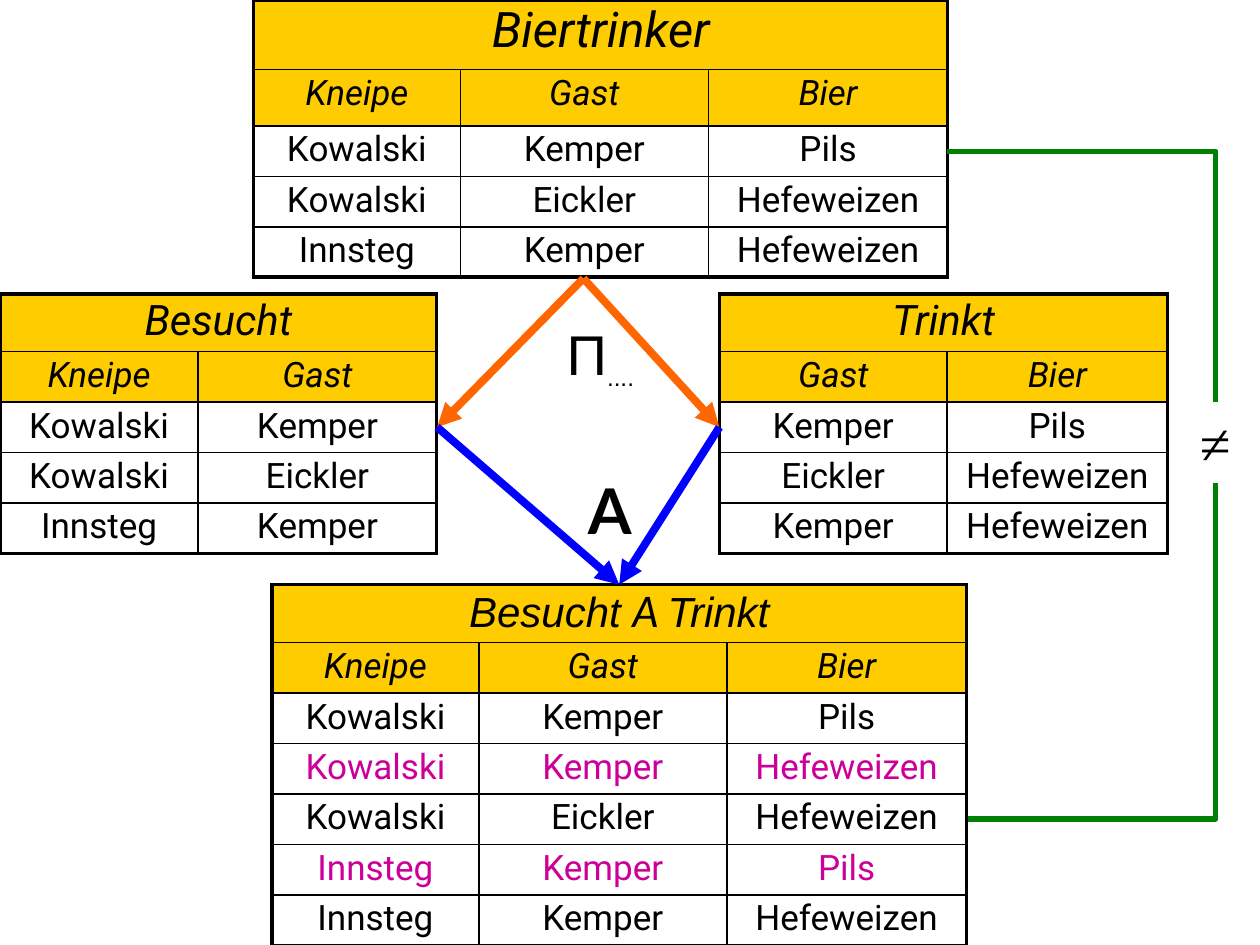
from lxml.etree import SubElement
from pptx import Presentation
from pptx.dml.color import RGBColor
from pptx.enum.shapes import MSO_CONNECTOR
from pptx.enum.text import MSO_AUTO_SIZE, PP_ALIGN
from pptx.oxml.ns import qn
from pptx.util import Pt

BLACK, GOLD, PINK = "000000", "FFCC00", "CC0099"
ORANGE, BLUE, GREEN = "FF6600", "0000FF", "008000"
ROW = 28.8


def color(value):
    return RGBColor.from_string(value)


def format_run(r, size, font="Roboto", c=BLACK, italic=False, bold=False):
    r.font.size, r.font.name = Pt(size), font
    r.font.italic, r.font.bold = italic, bold
    r.font.color.rgb = color(c)


def format_cell_paragraph(p):
    p.alignment, p.line_spacing = PP_ALIGN.CENTER, 0.9
    before = SubElement(p._p.get_or_add_pPr(), qn("a:spcBef"))
    SubElement(before, qn("a:spcPct"), val="20000")


def set_borders(cell, **widths):
    tcPr = cell._tc.get_or_add_tcPr()
    for side in "LRTB":
        ln = SubElement(tcPr, qn(f"a:ln{side}"), w=str(Pt(widths[side])))
        fill = SubElement(ln, qn("a:solidFill"))
        SubElement(fill, qn("a:srgbClr"), val=BLACK)


def add_relation(s, x, y, title, header, rows, widths, title_size=24,
                 title_h=33.1, header_h=ROW, pink_rows=()):
    """Title is a list of (text, font) parts; pink_rows counts data rows from 0."""
    n_rows, n_cols = len(rows) + 2, len(header)
    heights = [title_h, header_h] + [ROW] * len(rows)
    frame = s.shapes.add_table(n_rows, n_cols, Pt(x), Pt(y),
                               Pt(sum(widths)), Pt(sum(heights)))
    table = frame.table
    table.first_row = table.horz_banding = False
    for col, width in zip(table.columns, widths):
        col.width = Pt(width)
    for row, height in zip(table.rows, heights):
        row.height = Pt(height)

    # Thick outline, thin inner rules, gold heading rows
    for i in range(n_rows):
        for j in range(n_cols):
            cell = table.cell(i, j)
            set_borders(cell,
                        L=2.25 if j == 0 else 1,
                        R=2.25 if j == n_cols - 1 or i == 0 else 1,
                        T=2.25 if i == 0 else 1,
                        B=2.25 if i == n_rows - 1 else 1)
            if i < 2:
                cell.fill.solid()
                cell.fill.fore_color.rgb = color(GOLD)
            else:
                cell.fill.background()

    # Title row
    table.cell(0, 0).merge(table.cell(0, n_cols - 1))
    p = table.cell(0, 0).text_frame.paragraphs[0]
    format_cell_paragraph(p)
    for text, font in title:
        r = p.add_run()
        r.text = text
        format_run(r, title_size, font, italic=True)

    # Column names and tuples
    for i, values in enumerate([header] + rows):
        c = PINK if i - 1 in pink_rows else BLACK
        for j, value in enumerate(values):
            tf = table.cell(i + 1, j).text_frame
            tf.text = value
            p = tf.paragraphs[0]
            format_cell_paragraph(p)
            format_run(p.runs[0], 20, c=c, italic=i == 0)
    return frame


def add_line(s, start, end, c, width, kind=MSO_CONNECTOR.STRAIGHT, arrow=False):
    line = s.shapes.add_connector(kind, *(Pt(v) for v in start + end))
    line.line.color.rgb = color(c)
    line.line.width = Pt(width)
    spPr = line._element.spPr
    if kind == MSO_CONNECTOR.ELBOW:
        spPr.find(qn("a:prstGeom")).set("prst", "bentConnector2")
    if arrow:
        SubElement(line.line._get_or_add_ln(), qn("a:tailEnd"), type="triangle")
    SubElement(spPr, qn("a:effectLst"))
    return line


def add_symbol(s, x, y, w, h, text, size, font, bold=False):
    tf = s.shapes.add_textbox(Pt(x), Pt(y), Pt(w), Pt(h)).text_frame
    tf.word_wrap = False
    tf.auto_size = MSO_AUTO_SIZE.SHAPE_TO_FIT_TEXT
    p = tf.paragraphs[0]
    p.text = text
    p.alignment = PP_ALIGN.CENTER
    format_run(p.runs[0], size, font, bold=bold)
    return p


def main():
    prs = Presentation()
    prs.slide_width, prs.slide_height = Pt(720), Pt(540)
    s = prs.slides.add_slide(prs.slide_layouts[6])
    three_cols = [118.1, 141.8, 136.8]
    header = ["Kneipe", "Gast", "Bier"]

    # Original relation
    add_relation(s, 144.9, 0, [("Biertrinker", "Roboto")], header,
                 [["Kowalski", "Kemper", "Pils"],
                  ["Kowalski", "Eickler", "Hefeweizen"],
                  ["Innsteg", "Kemper", "Hefeweizen"]],
                 three_cols, title_size=28, title_h=39.6, header_h=32.4)

    # Its two projections
    add_relation(s, 0, 167.9, [("Besucht", "Roboto")], header[:2],
                 [["Kowalski", "Kemper"], ["Kowalski", "Eickler"],
                  ["Innsteg", "Kemper"]], [113.3, 136.3])
    add_relation(s, 411.1, 167.9, [("Trinkt", "Roboto")], header[1:],
                 [["Kemper", "Pils"], ["Eickler", "Hefeweizen"],
                  ["Kemper", "Hefeweizen"]], [130.1, 126])

    # Projection arrows
    source, left, right = (333.4, 159.1), (249.8, 244.1), (411.1, 244.1)
    for target in (left, right):
        add_line(s, source, target, ORANGE, 4.5, arrow=True)
    p = add_symbol(s, 314.6, 179.3, 56.9, 45.4, "Π", 32, "Arial")
    r = p.add_run()
    r.text = "...."
    format_run(r, 24, "Arial")
    r.font._element.set("baseline", "-25000")

    # Natural join of the projections
    joined = add_relation(
        s, 155.5, 334.1,
        [("Besucht ", "Arial"), ("A ", "Lato"), ("Trinkt", "Arial")], header,
        [["Kowalski", "Kemper", "Pils"],
         ["Kowalski", "Kemper", "Hefeweizen"],
         ["Kowalski", "Eickler", "Hefeweizen"],
         ["Innsteg", "Kemper", "Pils"],
         ["Innsteg", "Kemper", "Hefeweizen"]],
        three_cols, pink_rows=(1, 3))
    for start in (left, right):
        line = add_line(s, start, (354.2, 334.1), BLUE, 4.5, arrow=True)
        line.end_connect(joined, 0)
    add_symbol(s, 328.3, 265.7, 40.3, 50.4, "A", 36, "Lato", bold=True)

    # Inequality between the original relation and the join
    add_symbol(s, 678.2, 229.7, 32.4, 45.4, "≠", 32, "Times New Roman")
    for start, end in (((553, 468), (694.8, 275.8)),
                       ((541.4, 86.4), (694.8, 229.7))):
        add_line(s, start, end, GREEN, 3, MSO_CONNECTOR.ELBOW)

    prs.save("out.pptx")


if __name__ == "__main__":
    main()
